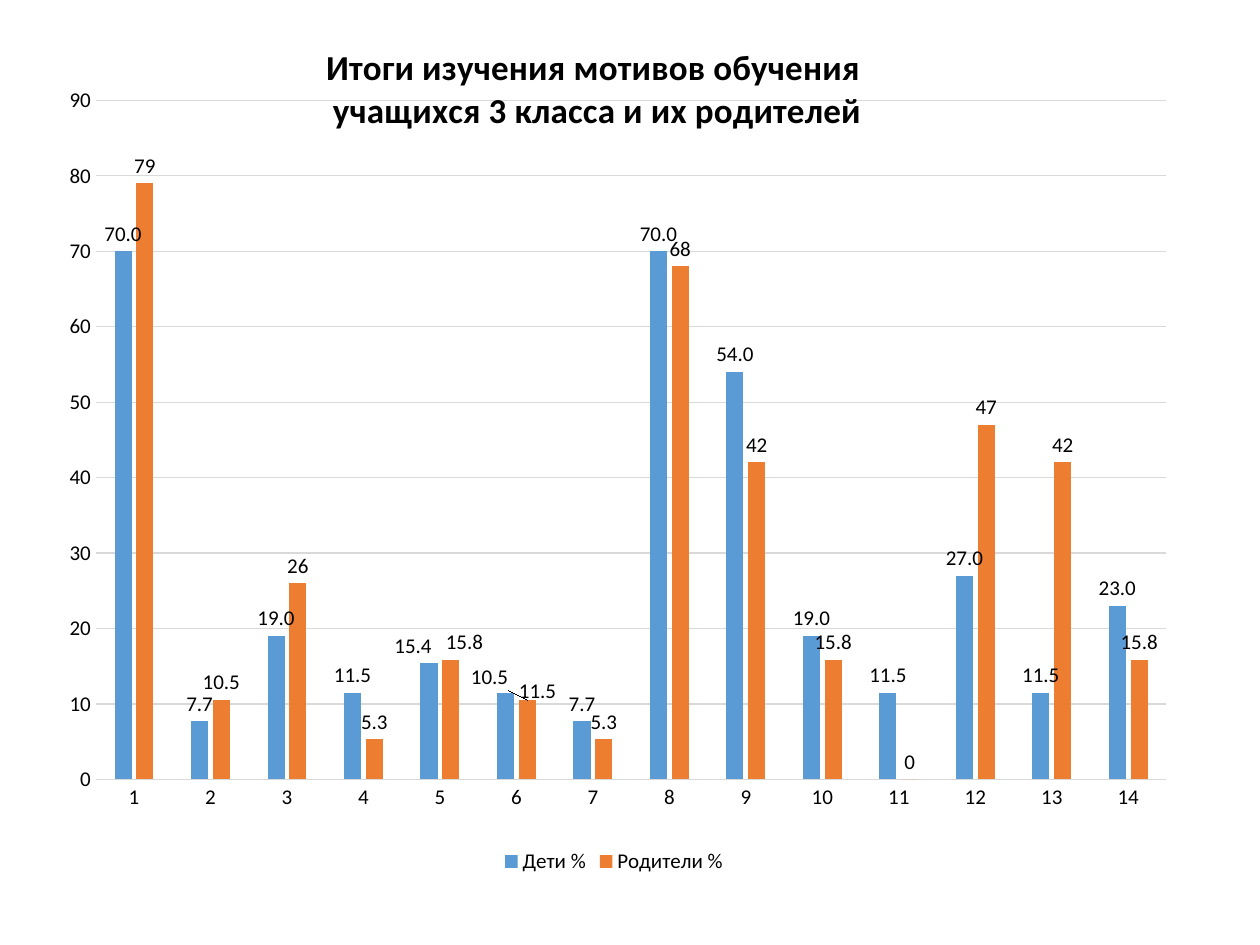
from lxml import etree
from pptx import Presentation
from pptx.chart.data import CategoryChartData
from pptx.dml.color import RGBColor
from pptx.enum.chart import (XL_CHART_TYPE, XL_LABEL_POSITION,
                             XL_LEGEND_POSITION, XL_TICK_MARK)
from pptx.enum.text import PP_ALIGN
from pptx.oxml.ns import qn
from pptx.util import Pt

COLUMN = XL_CHART_TYPE.COLUMN_CLUSTERED
OUTSIDE = XL_LABEL_POSITION.OUTSIDE_END
BOTTOM = XL_LEGEND_POSITION.BOTTOM
NO_TICK = XL_TICK_MARK.NONE
CENTER = PP_ALIGN.CENTER
SCALE = 914400 / 126
BLANK = 6

TITLE = ["Итоги изучения мотивов обучения ",
         "учащихся 3 класса и их родителей"]
# Name, colour, number format, values, label shifts by point
SERIES = [
    ("Дети %", "5B9BD5", "0.0",
     [70, 7.7, 19, 11.5, 15.4, 11.5, 7.7, 70, 54, 19, 11.5, 27, 11.5, 23],
     {4: (-0.014, 0), 5: (0.028, 0.019)}),
    ("Родители %", "ED7D31", "General",
     [79, 10.5, 26, 5.3, 15.8, 10.5, 5.3, 68, 42, 15.8, 0, 47, 42, 15.8],
     {4: (0.012, 0), 5: (-0.033, -0.006)}),
]


def px(n):
    return round(n * SCALE)


def rgb(code):
    return RGBColor.from_string(code)


def place(node, index, **parts):
    """Give a chart part a manual layout."""
    for old in node.findall(qn("c:layout")):
        node.remove(old)
    layout = etree.Element(qn("c:layout"))
    manual = etree.SubElement(layout, qn("c:manualLayout"))
    for name, value in parts.items():
        etree.SubElement(manual, qn("c:" + name), val=str(value))
    node.insert(index, layout)


class Deck:
    face = "Calibri"
    ink = "000000"
    rule = "D9D9D9"

    def __init__(self, wide, high):
        self.show = Presentation()
        self.show.slide_width, self.show.slide_height = px(wide), px(high)
        self.slide = self.show.slides.add_slide(self.show.slide_layouts[BLANK])

    def font(self, font, size=12, bold=False):
        look = {"name": self.face, "size": Pt(size), "bold": bold}
        for key, value in look.items():
            setattr(font, key, value)
        font.color.rgb = rgb(self.ink)

    def line(self, line):
        line.color.rgb = rgb(self.rule)
        line.width = Pt(0.75)

    def chart(self, x, y, w, h, rows):
        data = CategoryChartData()
        data.categories = [str(n + 1) for n in range(len(rows[0][3]))]
        for name, _, form, values, _ in rows:
            data.add_series(name, values, form)
        frame = self.slide.shapes.add_chart(COLUMN, px(x), px(y), px(w), px(h), data)
        chart = frame.chart
        self.font(chart.font, 10)
        plot = chart.plots[0]
        plot.gap_width, plot.overlap = 219, -27
        plot.vary_by_categories = False
        for item, row in zip(plot.series, rows):
            self.series(item, row)
        area = chart._chartSpace.find(".//" + qn("c:plotArea"))
        place(area, 0, layoutTarget="inner", xMode="edge", yMode="edge",
              x=0.047, y=0.084, w=0.936, h=0.799)
        return chart

    def series(self, item, row):
        _, color, form, _, shifts = row
        item.format.fill.solid()
        item.format.fill.fore_color.rgb = rgb(color)
        labels = item.data_labels
        look = {"show_value": True, "position": OUTSIDE,
                "number_format": form, "number_format_is_linked": False}
        for key, value in look.items():
            setattr(labels, key, value)
        self.font(labels.font)
        for point, (dx, dy) in shifts.items():
            label = item.points[point].data_label
            label.position = OUTSIDE
            self.font(label.font)
            node = item._element.xpath(f".//c:dLbl[c:idx/@val='{point}']")[0]
            place(node, 1, x=dx, y=dy)

    def axes(self, chart):
        cat, val = chart.category_axis, chart.value_axis
        for axis in (cat, val):
            axis.major_tick_mark = axis.minor_tick_mark = NO_TICK
            self.font(axis.tick_labels.font)
        self.line(cat.format.line)
        val.format.line.fill.background()
        val.minimum_scale, val.maximum_scale, val.major_unit = 0, 90, 10
        val.tick_labels.number_format = "General"
        val.tick_labels.number_format_is_linked = False
        self.line(val.major_gridlines.format.line)

    def legend(self, chart):
        chart.has_legend = True
        chart.legend.position = BOTTOM
        chart.legend.include_in_layout = False
        self.font(chart.legend.font)

    def title(self, chart, lines):
        chart.has_title = True
        title = chart.chart_title
        title.text_frame.text = "\n".join(lines)
        for para in title.text_frame.paragraphs:
            para.alignment = CENTER
            self.font(para.font, 20, True)
            for run in para.runs:
                self.font(run.font, 20, True)
        node = title._element
        place(node, 1, xMode="edge", yMode="edge", x=0.245, y=0.013)
        node.find(qn("c:overlay")).set("val", "1")


def main():
    deck = Deck(1260, 945)
    # Columns with their labels
    chart = deck.chart(42, 29, 1144, 850, SERIES)
    # Axes, legend and title
    deck.axes(chart)
    deck.legend(chart)
    deck.title(chart, TITLE)
    deck.show.save("out.pptx")


if __name__ == "__main__":
    main()
